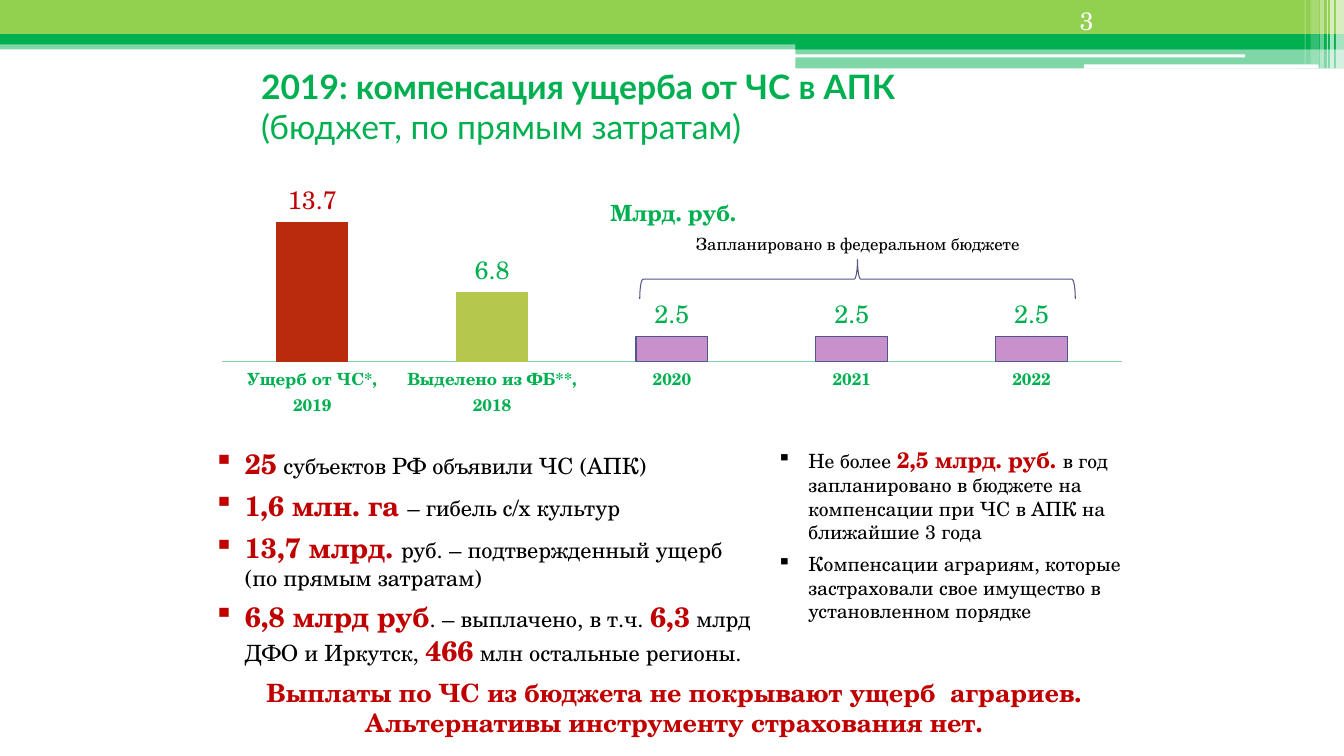
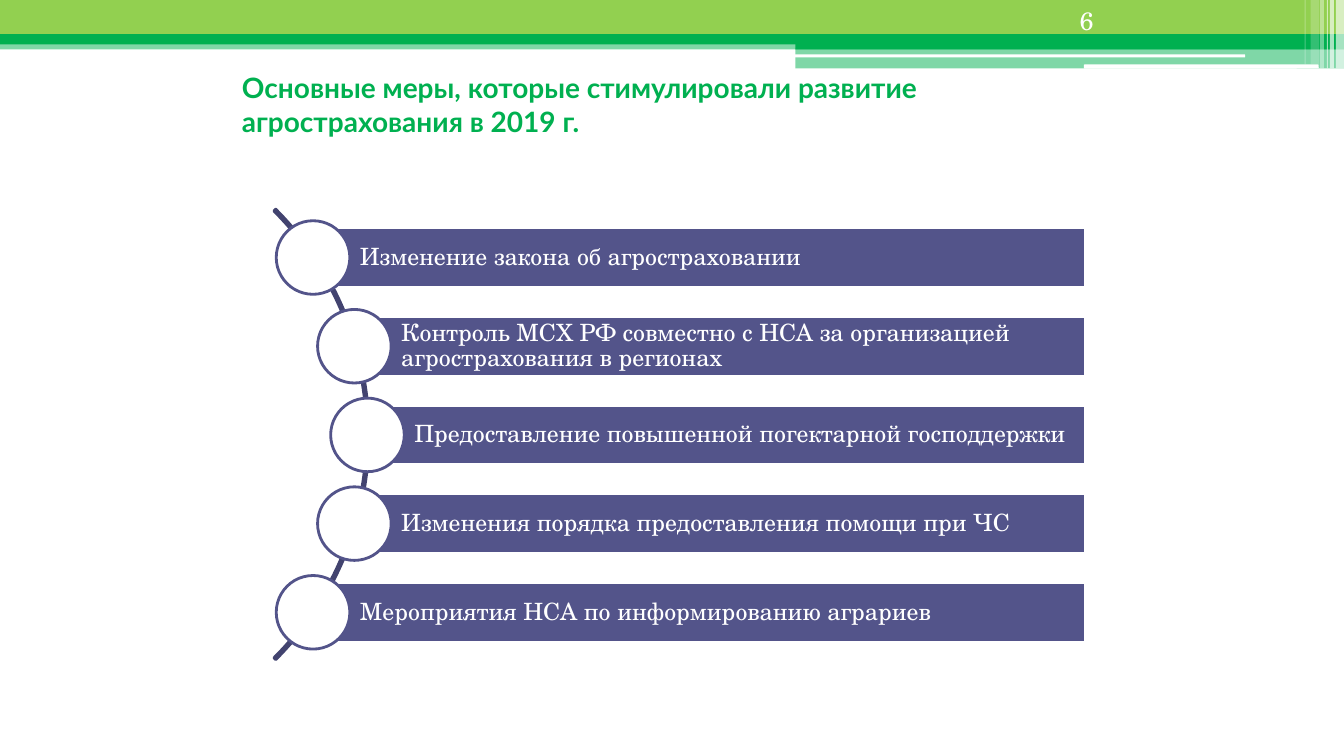
from math import sqrt
from lxml.etree import SubElement
from pptx import Presentation
from pptx.chart.data import CategoryChartData
from pptx.dml.color import RGBColor
from pptx.enum.chart import XL_CHART_TYPE, XL_LABEL_POSITION, XL_TICK_MARK
from pptx.enum.shapes import MSO_SHAPE
from pptx.enum.text import MSO_ANCHOR, MSO_AUTO_SIZE, PP_ALIGN
from pptx.oxml.ns import qn
from pptx.util import Emu, Pt

PX = 9144  # EMU in one px, 100 px to the inch
HEAD, BODY = "Lato", "TeX Gyre Schola"
COLORS = {
    "green": "00B050", "lime": "92D050", "white": "FFFFFF", "black": "000000",
    "red": "C00000", "brick": "BA2B0E", "olive": "B6C84C", "lilac": "C991CB",
    "indigo": "53548A", "navy": "42436F", "axis": "7FD7A7",
}

# Header bands: left, top, width, height, colour, opacity in percent
BANDS = [
    (0, 40, 1333, 9, "green", 50),
    (0, 0, 1333, 34, "lime", 100),
    (0, 34, 1333, 10, "green", 100),
    (789, 39, 544, 10, "green", 100),
    (789, 48, 544, 20, "green", 50),
]
PILLS = [(788, 54, 447, 3), (1075, 64, 233, 4)]
# Light stripes at the right end: left, width, height, opacity
STRIPES = [
    (1325, 8, 68, 65), (1319, 4, 68, 65), (1316, 1, 68, 60),
    (1309, 4, 68, 40), (1300, 8, 64, 20), (1294, 1, 64, 30),
]


def px(*sizes):
    return [Emu(size * PX) for size in sizes]


def rgb(name):
    return RGBColor.from_string(COLORS[name])


def style(font, size, color, bold=False, face=BODY):
    font.name, font.size, font.bold = face, Pt(size), bold
    font.color.rgb = rgb(color)


def place(node, index, **parts):
    """Give a chart part a fixed layout, in fractions of the chart."""
    old = node.find(qn("c:layout"))
    if old is not None:
        node.remove(old)
    layout = node.makeelement(qn("c:layout"), {})
    node.insert(index, layout)
    manual = SubElement(layout, qn("c:manualLayout"))
    for tag, val in parts.items():
        SubElement(manual, qn("c:" + tag)).set("val", str(val))


class Deck:
    def __init__(self):
        self.show = Presentation()
        self.show.slide_width, self.show.slide_height = px(1333, 750)
        self.slide = None

    def page(self, number):
        self.slide = self.show.slides.add_slide(self.show.slide_layouts[5])
        for left, top, width, height, color, alpha in BANDS:
            self.shape(MSO_SHAPE.RECTANGLE, (left, top, width, height), color, alpha=alpha)
        for box in PILLS:
            self.shape(MSO_SHAPE.ROUNDED_RECTANGLE, box, "white")
        for left, width, height, alpha in STRIPES:
            self.shape(MSO_SHAPE.RECTANGLE, (left, 0, width, height), "white", alpha=alpha)
        self.text((1061, 0, 83, 40), number, 18, "white")

    def title(self, box, size, head, tail=""):
        shape = self.slide.shapes.title
        shape.left, shape.top, shape.width, shape.height = px(*box)
        frame = shape.text_frame
        frame.auto_size = MSO_AUTO_SIZE.NONE
        frame.vertical_anchor = MSO_ANCHOR.TOP if tail else MSO_ANCHOR.MIDDLE
        para = frame.paragraphs[0]
        para.alignment = PP_ALIGN.LEFT
        style(para.font, size, "green", True, HEAD)
        para.add_run().text = head
        if tail:
            para.add_line_break()
            run = para.add_run()
            run.text = tail
            run.font.bold = False

    def shape(self, kind, box, fill=None, line=None, weight=2, alpha=100):
        shape = self.slide.shapes.add_shape(kind, *px(*box))
        shape.shadow.inherit = False
        if fill:
            shape.fill.solid()
            shape.fill.fore_color.rgb = rgb(fill)
        else:
            shape.fill.background()
        if alpha < 100:
            color = shape.fill._xPr.find(qn("a:solidFill"))[0]
            SubElement(color, qn("a:alpha")).set("val", str(alpha * 1000))
        if line:
            shape.line.color.rgb = rgb(line)
            shape.line.width = Pt(weight)
        else:
            shape.line.fill.background()
        return shape

    def text(self, box, words, size, color, bold=False, align=PP_ALIGN.LEFT):
        frame = self.slide.shapes.add_textbox(*px(*box)).text_frame
        frame.word_wrap = True
        para = frame.paragraphs[0]
        para.text, para.alignment = words, align
        style(para.font, size, color, bold)

    def bullets(self, box, items, size, big):
        """Words between bars are large, bold and red."""
        frame = self.slide.shapes.add_textbox(*px(*box)).text_frame
        frame.word_wrap = True
        for i, item in enumerate(items):
            para = frame.add_paragraph() if i else frame.paragraphs[0]
            para.space_after = Pt(6)
            props = para._p.get_or_add_pPr()
            props.set("marL", str(31 * PX))
            props.set("indent", str(-31 * PX))
            SubElement(props, qn("a:buChar")).set("char", "▪")
            for j, words in enumerate(item.split("|")):
                if words:
                    run = para.add_run()
                    run.text = words
                    if j % 2:
                        style(run.font, big, "red", True)
                    else:
                        style(run.font, size, "black")

    def bars(self, box, name, cats, vals, fills):
        data = CategoryChartData()
        data.categories = cats
        data.add_series(name, vals)
        chart = self.slide.shapes.add_chart(
            XL_CHART_TYPE.COLUMN_CLUSTERED, *px(*box), data).chart
        style(chart.font, 18, "green")
        chart.has_legend = False
        # Title and plot area
        chart.has_title = True
        head = chart.chart_title.text_frame.paragraphs[0]
        head.text = name
        style(head.font, 16, "green", True)
        place(chart.chart_title._element, 1, xMode="edge", yMode="edge", x=0.43, y=0.19)
        place(chart._chartSpace.chart.plotArea, 0, layoutTarget="inner", xMode="edge",
              yMode="edge", x=0.02, y=0.225, w=0.96, h=0.56)
        # Axes
        axis = chart.value_axis
        axis.minimum_scale, axis.maximum_scale = 0, 16
        axis.has_major_gridlines = axis.visible = False
        axis = chart.category_axis
        axis.major_tick_mark = XL_TICK_MARK.NONE
        axis.format.line.color.rgb = rgb("axis")
        axis.format.line.width = Pt(0.75)
        style(axis.tick_labels.font, 12, "green", True)
        # Columns and labels
        plot = chart.plots[0]
        plot.gap_width, plot.vary_by_categories = 150, False
        series = plot.series[0]
        labels = series.data_labels
        labels.show_value = True
        labels.position = XL_LABEL_POSITION.OUTSIDE_END
        style(labels.font, 18, "green")
        for i, fill in enumerate(fills):
            form = series.points[i].format
            form.fill.solid()
            form.fill.fore_color.rgb = rgb(fill)
            if fill == "lilac":
                form.line.color.rgb = rgb("indigo")
                form.line.width = Pt(0.75)
        first = series.points[0].data_label
        style(first.font, 18, "red")
        first.position = XL_LABEL_POSITION.OUTSIDE_END

    def steps(self, items):
        """Bars strung along an arc, with a ring at the start of each."""
        mid, hub, radius, pitch = 431, 50, 314, 88
        arc = self.shape(MSO_SHAPE.BLOCK_ARC, (-266, 115, 632, 632), line="navy")
        for i, val in enumerate((189, 27, 0.004)):
            arc.adjustments[i] = val
        for i, words in enumerate(items):
            shift = round((i - (len(items) - 1) / 2) * pitch)
            left = round(hub + sqrt(radius ** 2 - shift ** 2))
            top = mid + shift
            bar = self.shape(MSO_SHAPE.RECTANGLE, (left, top - 29, 1077 - left, 59),
                             "indigo", "white")
            frame = bar.text_frame
            frame.word_wrap = True
            frame.vertical_anchor = MSO_ANCHOR.MIDDLE
            (frame.margin_left, frame.margin_top,
             frame.margin_right, frame.margin_bottom) = px(47, 5, 5, 5)
            para = frame.paragraphs[0]
            para.text, para.alignment, para.line_spacing = words, PP_ALIGN.LEFT, 0.9
            style(para.font, 17, "white")
            self.shape(MSO_SHAPE.OVAL, (left - 36, top - 36, 73, 73), "white", "indigo")


def main():
    deck = Deck()

    # Damage and compensation
    deck.page("3")
    deck.title((249, 60, 906, 69), 24, "2019: компенсация ущерба от ЧС в АПК",
               "(бюджет, по прямым затратам)")
    deck.bars((202, 132, 929, 289), "Млрд. руб.",
              ["Ущерб от ЧС*, 2019", "Выделено из ФБ**, 2018", "2020", "2021", "2022"],
              [13.7, 6.8, 2.5, 2.5, 2.5], ["brick", "olive"] + ["lilac"] * 3)
    brace = deck.shape(MSO_SHAPE.RIGHT_BRACE, (831, 61, 39, 432), line="indigo", weight=0.75)
    brace.rotation = 270
    deck.text((678, 227, 346, 30), "Запланировано в федеральном бюджете", 12, "black",
              align=PP_ALIGN.CENTER)
    deck.bullets((202, 438, 559, 231), [
        "|25| субъектов РФ объявили ЧС (АПК)",
        "|1,6 млн. га |– гибель с/х культур",
        "|13,7 млрд. |руб. – подтвержденный ущерб (по прямым затратам)",
        "|6,8 млрд руб|. – выплачено, в т.ч. |6,3| млрд ДФО и Иркутск, "
        "|466| млн остальные регионы.",
    ], 16, 20)
    deck.bullets((761, 438, 400, 187), [
        "Не более |2,5 млрд. руб. |в год запланировано в бюджете на компенсации "
        "при ЧС в АПК на ближайшие 3 года",
        "Компенсации аграриям, которые застраховали свое имущество "
        "в установленном порядке",
    ], 14, 16)
    deck.text((202, 667, 933, 71), "Выплаты по ЧС из бюджета не покрывают ущерб  аграриев. "
              "Альтернативы инструменту страхования нет.", 18, "red", True, PP_ALIGN.CENTER)

    # Main measures
    deck.page("6")
    deck.title((230, 68, 898, 71), 20,
               "Основные меры, которые стимулировали развитие агрострахования в 2019 г.")
    deck.steps([
        "Изменение закона об агростраховании",
        "Контроль МСХ РФ совместно с НСА за организацией агрострахования в регионах",
        "Предоставление повышенной погектарной господдержки",
        "Изменения порядка предоставления помощи при ЧС",
        "Мероприятия НСА по информированию аграриев",
    ])

    deck.show.save("out.pptx")


if __name__ == "__main__":
    main()
